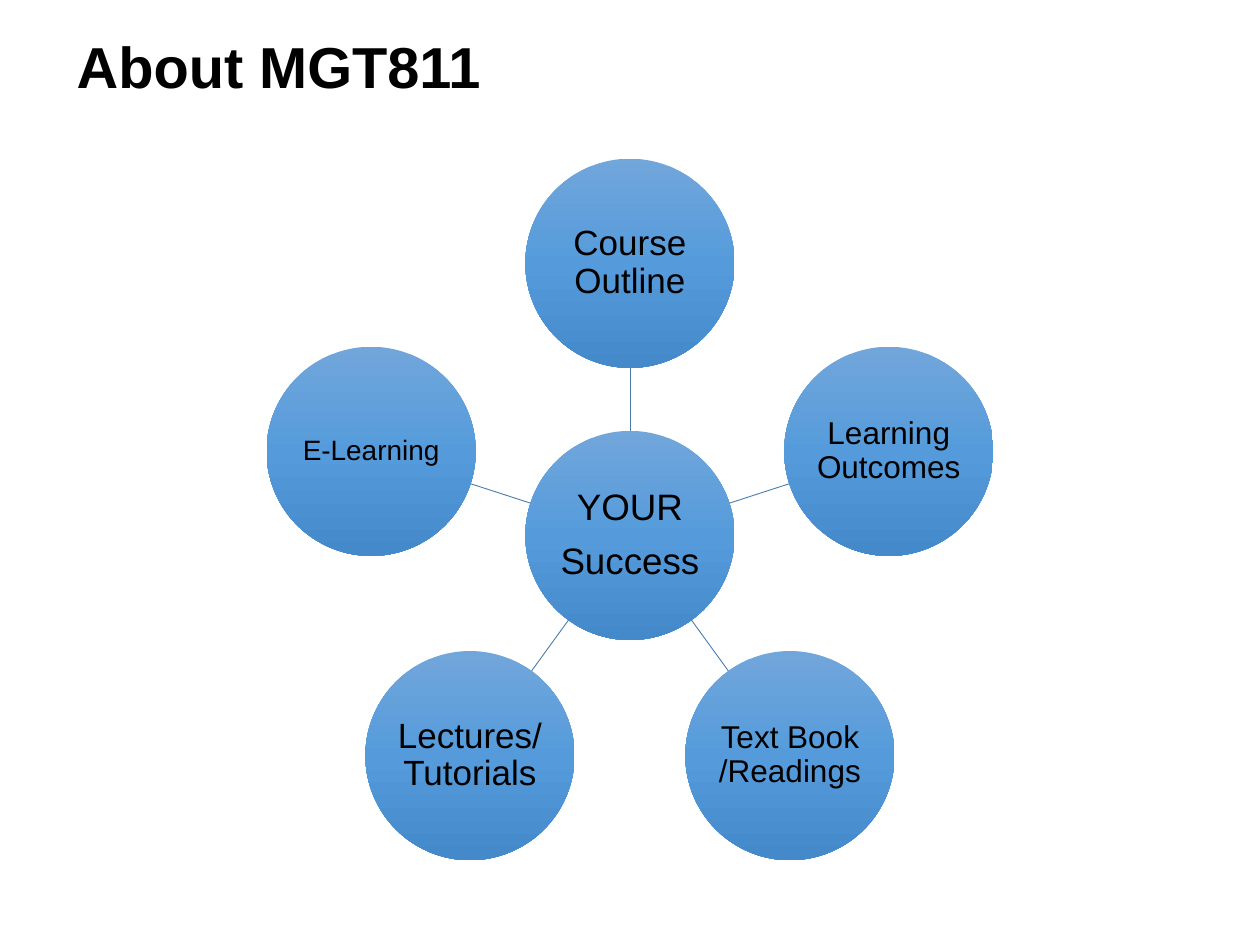
from copy import deepcopy
from dataclasses import dataclass
from math import cos, radians, sin

from lxml.etree import SubElement
from pptx import Presentation
from pptx.dml.color import RGBColor
from pptx.enum.shapes import MSO_CONNECTOR, MSO_SHAPE
from pptx.enum.text import MSO_ANCHOR, PP_ALIGN
from pptx.oxml.ns import qn
from pptx.util import Inches, Pt


@dataclass(frozen=True)
class Theme:
    font: str = "Arial"
    ink: str = "000000"
    spoke: str = "497CAB"
    gradient: tuple = ((0, "71A6DB"), (0.5, "559BDB"), (1, "448ACA"))
    title_size: int = 33
    hub_size: int = 21
    large: int = 20
    medium: int = 18
    small: int = 16


THEME = Theme()
CENTER_X, CENTER_Y = 5, 4.25
ORBIT = 2.16
DIAMETER = 1.66
TOPICS = (
    ("Course Outline", THEME.large),
    ("Learning Outcomes", THEME.medium),
    ("Text Book /Readings", THEME.medium),
    ("Lectures/Tutorials", THEME.large),
    ("E-Learning", THEME.small),
)


def apply(target, values):
    for name, value in values.items():
        setattr(target, name, value)


def write(frame, lines, size, align, bold=False, gap=0):
    apply(frame, {"word_wrap": True, "vertical_anchor": MSO_ANCHOR.MIDDLE})
    frame.text = "\n".join(lines)
    for paragraph in frame.paragraphs:
        apply(paragraph, {"alignment": align, "line_spacing": 0.9, "space_after": Pt(gap)})
        apply(paragraph.font, {"name": THEME.font, "size": Pt(size), "bold": bold})
        paragraph.font.color.rgb = RGBColor.from_string(THEME.ink)


def add_title(slide, title):
    heading = slide.shapes.add_textbox(Inches(0.51), Inches(0.02), Inches(9.01), Inches(1.06))
    write(heading.text_frame, [title], THEME.title_size, PP_ALIGN.LEFT, bold=True)


def shade(circle):
    circle.fill.gradient()
    circle.fill.gradient_angle = 270
    stop_list = circle._element.spPr.find(".//" + qn("a:gsLst"))
    stop_list.insert(1, deepcopy(stop_list[0]))
    for stop, (position, color) in zip(circle.fill.gradient_stops, THEME.gradient):
        stop.position = position
        stop.color.rgb = RGBColor.from_string(color)


def add_circle(slide, x, y, lines, size):
    circle = slide.shapes.add_shape(
        MSO_SHAPE.OVAL, Inches(x - DIAMETER / 2), Inches(y - DIAMETER / 2),
        Inches(DIAMETER), Inches(DIAMETER))
    circle.shadow.inherit = False
    circle.line.fill.background()
    shade(circle)
    sides = ("left", "right", "top", "bottom")
    apply(circle.text_frame, {f"margin_{side}": Inches(0.01) for side in sides})
    write(circle.text_frame, lines, size, PP_ALIGN.CENTER, gap=0.4 * size)


def polar(distance, angle):
    return CENTER_X + distance * cos(angle), CENTER_Y + distance * sin(angle)


def add_spoke(slide, angle):
    ends = polar(DIAMETER / 2, angle) + polar(ORBIT - DIAMETER / 2, angle)
    spoke = slide.shapes.add_connector(MSO_CONNECTOR.STRAIGHT, *map(Inches, ends))
    spoke.line.color.rgb = RGBColor.from_string(THEME.spoke)
    spoke.line.width = Pt(0.5)
    SubElement(spoke._element.spPr, qn("a:effectLst"))


def main():
    deck = Presentation()
    apply(deck, {"slide_width": Inches(10), "slide_height": Inches(7.5)})
    slide = deck.slides.add_slide(deck.slide_layouts[6])
    add_title(slide, "About MGT811")
    add_circle(slide, CENTER_X, CENTER_Y, ["YOUR", "Success"], THEME.hub_size)
    for index, (topic, size) in enumerate(TOPICS):
        angle = radians(360 / len(TOPICS) * index - 90)
        add_spoke(slide, angle)
        add_circle(slide, *polar(ORBIT, angle), [topic], size)
    deck.save("out.pptx")


if __name__ == "__main__":
    main()
